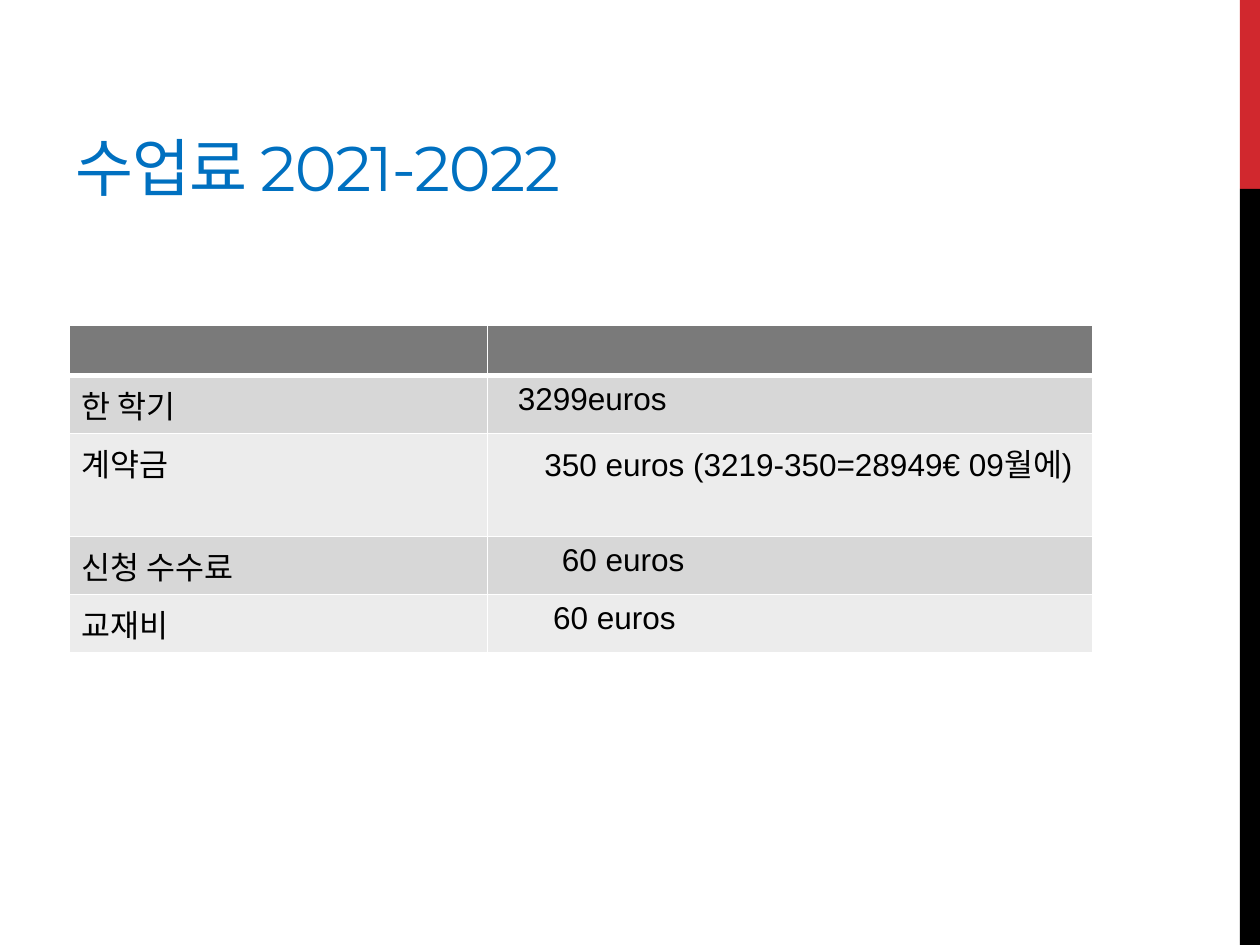
from pptx import Presentation
from pptx.util import Inches, Pt
from pptx.dml.color import RGBColor
from pptx.enum.shapes import MSO_SHAPE
from pptx.enum.text import MSO_ANCHOR
from lxml.etree import SubElement
from pptx.oxml.ns import qn

# Content: label, fee, first-line indent of the fee and row height in inches
TITLE = "수업료 2021-2022"
LINE = 0.46
FEES = [
    ("", "", 0, 0.4),
    ("한 학기", "3299euros", 0.14, LINE),
    ("계약금", "350 euros (3219-350=28949€ 09월에)", 0.35, 0.82),
    ("신청 수수료", "60 euros", 0.49, LINE),
    ("교재비", "60 euros", 0.42, LINE),
]
COLS = (3.32, 4.8)
WIDE, HIGH = 10, 7.5
BAR = 0.16
SPLIT = 1.5

THEME = {
    "title": {"name": "Montserrat", "size": Pt(36), "color": "0070C0"},
    "body": {"name": "Arial", "size": Pt(18), "color": "000000"},
    "bars": ("D1282E", "000000"),
    "head": "7A7A7A",
    "bands": ("D7D7D7", "ECECEC"),
    "rule": "FFFFFF",
}


def style(font, look):
    for key, value in look.items():
        if key == "color":
            font.color.rgb = RGBColor.from_string(value)
        else:
            setattr(font, key, value)


def paint(fill, color):
    fill.solid()
    fill.fore_color.rgb = RGBColor.from_string(color)


def edge(cell, side, width):
    props = cell._tc.get_or_add_tcPr()
    line = SubElement(props, qn(f"a:ln{side}"), w=str(Pt(width)))
    solid = SubElement(line, qn("a:solidFill"))
    SubElement(solid, qn("a:srgbClr"), val=THEME["rule"])


deck = Presentation()
deck.slide_width, deck.slide_height = Inches(WIDE), Inches(HIGH)
slide = deck.slides.add_slide(deck.slide_layouts[6])

# Side bars
spans = ((0, SPLIT), (SPLIT, HIGH - SPLIT))
for (top, tall), color in zip(spans, THEME["bars"]):
    bar = slide.shapes.add_shape(
        MSO_SHAPE.RECTANGLE, Inches(WIDE - BAR), Inches(top),
        Inches(BAR), Inches(tall))
    bar.shadow.inherit = False
    bar.line.fill.background()
    paint(bar.fill, color)

# Title
box = slide.shapes.add_textbox(
    Inches(0.5), Inches(0.17), Inches(6.33), Inches(1.5))
frame = box.text_frame
frame.word_wrap = True
frame.vertical_anchor = MSO_ANCHOR.BOTTOM
run = frame.paragraphs[0].add_run()
run.text = TITLE
style(run.font, THEME["title"])
run.font._element.set("spc", "-60")

# Fee table
total = sum(fee[-1] for fee in FEES)
table = slide.shapes.add_table(
    len(FEES), len(COLS), Inches(0.55), Inches(2.58),
    Inches(sum(COLS)), Inches(total)).table
for col, width in zip(table.columns, COLS):
    col.width = Inches(width)

for r, (label, fee, indent, tall) in enumerate(FEES):
    table.rows[r].height = Inches(tall)
    color = THEME["bands"][(r - 1) % 2] if r else THEME["head"]
    for c, (text, shift) in enumerate(((label, 0), (fee, indent))):
        cell = table.cell(r, c)
        for side in "LRTB":
            thick = (r, side) in ((0, "B"), (1, "T"))
            edge(cell, side, 3 if thick else 1)
        paint(cell.fill, color)
        para = cell.text_frame.paragraphs[0]
        style(para.font, THEME["body"])
        if text:
            run = para.add_run()
            run.text = text
            style(run.font, THEME["body"])
        if shift:
            props = para._p.get_or_add_pPr()
            props.set("marL", "0")
            props.set("indent", str(Inches(shift)))

deck.save("out.pptx")
